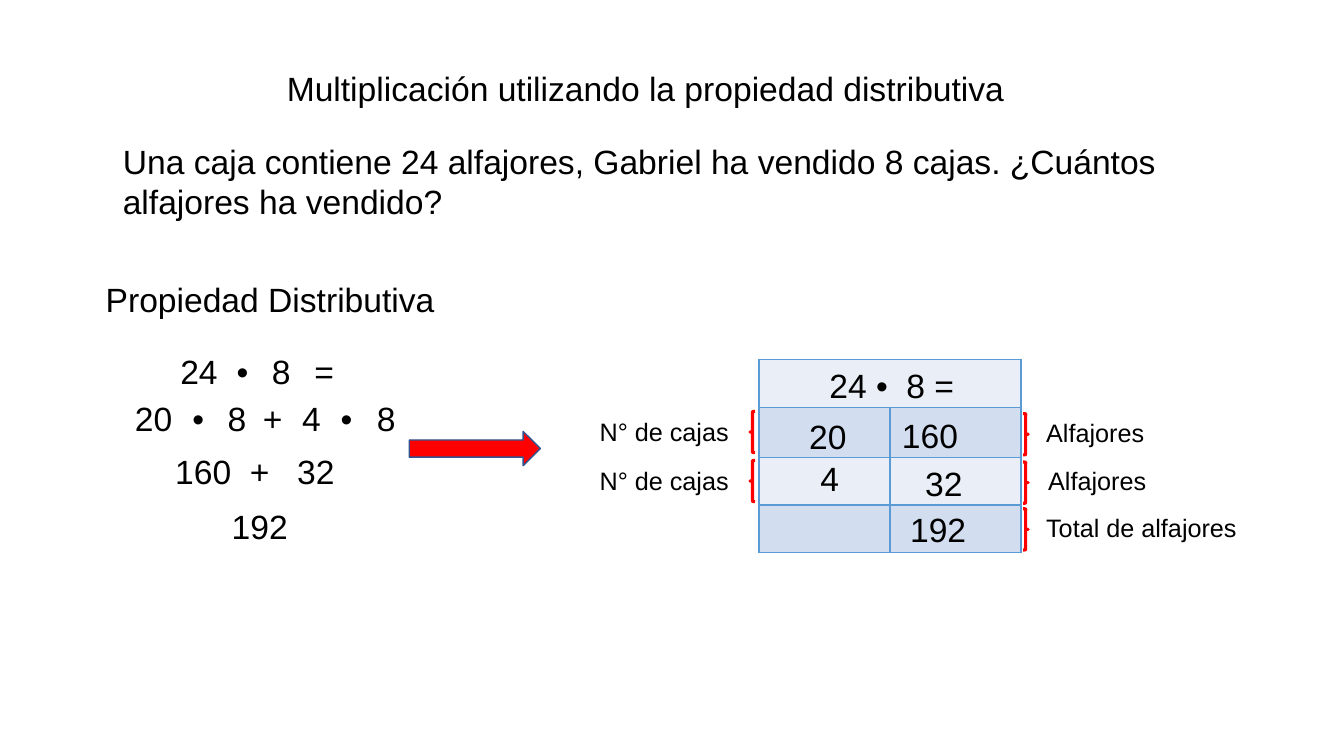
from lxml.etree import SubElement
from pptx import Presentation
from pptx.dml.color import RGBColor
from pptx.enum.shapes import MSO_SHAPE
from pptx.enum.text import PP_ALIGN
from pptx.oxml.ns import qn
from pptx.util import Inches, Pt

COLORS = {
    "text": "000000",
    "mark": "FF0000",
    "arrow_edge": "325491",
    "border": "5B9BD5",
    "light_row": "EAEFF7",
    "dark_row": "D2DEEF",
}
COLUMNS, ROWS = 80, 45


def color(name):
    return RGBColor.from_string(COLORS[name])


class Board:
    """Draws on one slide; every length is in grid columns and rows."""

    font, large, small = "Arial", 24, 18

    def __init__(self, deck):
        self.cell_width = deck.slide_width / COLUMNS
        self.cell_height = deck.slide_height / ROWS
        self.shapes = deck.slides.add_slide(deck.slide_layouts[6]).shapes

    def across(self, columns):
        return round(columns * self.cell_width)

    def down(self, rows):
        return round(rows * self.cell_height)

    def area(self, left, top, width, height):
        return self.across(left), self.down(top), self.across(width), self.down(height)

    def text(self, words, left, top, width, height=3, size=large, align=PP_ALIGN.LEFT):
        frame = self.shapes.add_textbox(*self.area(left, top, width, height)).text_frame
        frame.word_wrap = True
        frame.text = words
        paragraph = frame.paragraphs[0]
        paragraph.alignment = align
        for run in paragraph.runs:
            run.font.name = self.font
            run.font.size = Pt(size)
            run.font.color.rgb = color("text")

    def label(self, words, left, top, width):
        self.text(words, left, top, width, 2.46, self.small)

    def brace(self, left, top, rotation=0):
        brace = self.shapes.add_shape(MSO_SHAPE.RIGHT_BRACE, *self.area(left, top, 0.3, 2.46))
        brace.shadow.inherit = False
        brace.rotation = rotation
        brace.fill.background()
        brace.line.color.rgb = color("mark")
        brace.line.width = Pt(2.25)

    def arrow(self, left, top, width, height):
        arrow = self.shapes.add_shape(MSO_SHAPE.RIGHT_ARROW, *self.area(left, top, width, height))
        arrow.shadow.inherit = False
        arrow.fill.solid()
        arrow.fill.fore_color.rgb = color("mark")
        arrow.line.color.rgb = color("arrow_edge")
        arrow.line.width = Pt(1)

    def table(self, left, top, column_width, row_heights):
        """Two-column banded table with its first row merged."""
        place = self.area(left, top, 2 * column_width, sum(row_heights))
        table = self.shapes.add_table(len(row_heights), 2, *place).table
        for column in table.columns:
            column.width = self.across(column_width)
        for index, (row, height) in enumerate(zip(table.rows, row_heights)):
            row.height = self.down(height)
            for cell in row.cells:
                self.border(cell)
                cell.fill.solid()
                cell.fill.fore_color.rgb = color("dark_row" if index % 2 else "light_row")
        table.cell(0, 0).merge(table.cell(0, 1))

    def border(self, cell):
        properties = cell._tc.get_or_add_tcPr()
        for side in ("a:lnL", "a:lnR", "a:lnT", "a:lnB"):
            edge = SubElement(properties, qn(side), w=str(Pt(1)))
            fill = SubElement(edge, qn("a:solidFill"))
            SubElement(fill, qn("a:srgbClr"), val=COLORS["border"])


def symbol_width(symbol):
    return {1: 2.58, 2: 3.5, 3: 4.56}[len(symbol)] if symbol.isdigit() else 1.9


# Each line of the calculation: its top, then each symbol with its left edge
CALCULATION = [
    (20.6, [("24", 10.14), ("•", 13.5), ("8", 15.6), ("=", 18.12)]),
    (23.42, [("20", 7.44), ("•", 10.86), ("8", 12.96), ("+", 15.06),
             ("4", 17.4), ("•", 19.68), ("8", 21.84)]),
    (26.52, [("160", 9.84), ("+", 14.28), ("32", 17.1)]),
    (29.82, [("192", 13.2)]),
]
TABLE_FIGURES = [
    ("24 •  8 =", 48.78, 21.42, 9.6),
    ("20", 47.58, 24.48, 3.96),
    ("4", 48.24, 26.94, 2.58),
    ("160", 53.1, 24.42, 4.86),
    ("32", 54.48, 27.24, 3.96),
    ("192", 53.58, 30, 5.46),
]


def main():
    deck = Presentation()
    deck.slide_width, deck.slide_height = Inches(13.33), Inches(7.5)
    board = Board(deck)

    board.text("Multiplicación utilizando la propiedad distributiva ",
               14.76, 3.72, 47.88, align=PP_ALIGN.CENTER)
    board.text("Una caja contiene 24 alfajores, Gabriel ha vendido 8 cajas. "
               "¿Cuántos alfajores ha vendido?", 6.72, 8.1, 66.42, 5.46)
    board.text("Propiedad Distributiva", 5.7, 16.32, 22.26)

    for top, symbols in CALCULATION:
        for symbol, left in symbols:
            board.text(symbol, left, top, symbol_width(symbol))
    board.arrow(24.36, 25.68, 7.8, 2.04)

    board.table(45.18, 21.42, 7.8, [2.82, 3, 2.82, 2.82])
    for figure in TABLE_FIGURES:
        board.text(*figure)

    for top in (24.48, 27.4):
        board.label("N° de cajas", 35.1, top, 9.42)
        board.brace(44.64, top, 180)
    for meaning, left, top in [("Alfajores", 61.68, 24.54), ("Alfajores", 61.8, 27.42),
                               ("Total de alfajores", 61.68, 30.2)]:
        board.label(meaning, left, top, 12.6)
        board.brace(60.9, top + 0.08)

    deck.save("out.pptx")


if __name__ == "__main__":
    main()
